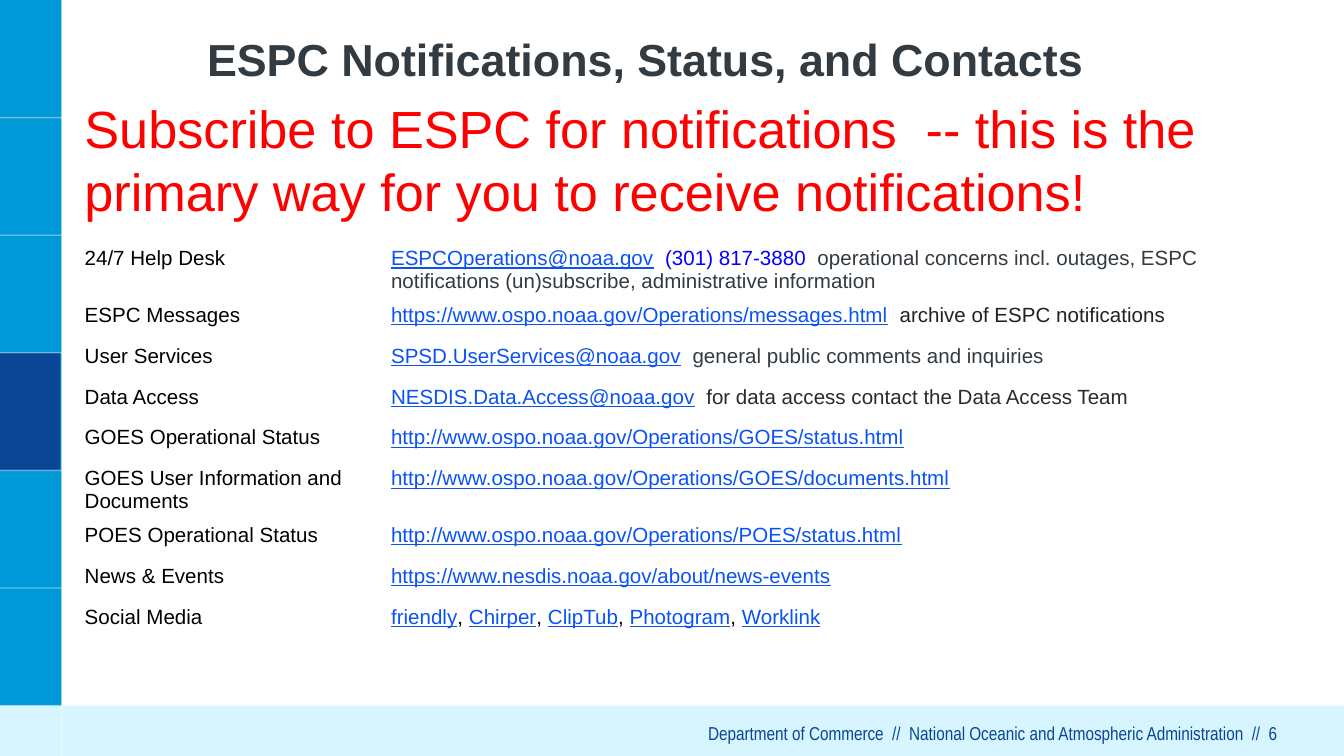
"""Build the ESPC notifications, status and contacts slide."""
from lxml.etree import SubElement
from pptx import Presentation
from pptx.dml.color import RGBColor
from pptx.enum.shapes import MSO_CONNECTOR, MSO_SHAPE
from pptx.enum.text import MSO_ANCHOR, PP_ALIGN
from pptx.oxml.ns import qn
from pptx.util import Inches, Pt

COLORS = {
    "sky": "0099D8", "navy": "0B4596", "ice": "D6F5FF", "white": "FFFFFF",
    "slate": "323B42", "red": "FF0000", "black": "000000", "link": "0A52F6",
    "azure": "3687F3", "phone": "0000FF", "ink": "222222", "charcoal": "252C31",
}


def add_run(paragraph, text, color, size, **formats):
    run = paragraph.add_run()
    run.text = text
    settings = {"name": "Arial", "size": Pt(size), "bold": False, **formats}
    for name, value in settings.items():
        setattr(run.font, name, value)
    run.font.color.rgb = RGBColor.from_string(COLORS[color])


def set_frame(frame, horizontal, vertical, anchor=MSO_ANCHOR.TOP):
    settings = {
        "margin_left": Inches(horizontal), "margin_right": Inches(horizontal),
        "margin_top": Inches(vertical), "margin_bottom": Inches(vertical),
        "word_wrap": True, "vertical_anchor": anchor,
    }
    for name, value in settings.items():
        setattr(frame, name, value)


slide_width = 10
slide_height = slide_width * 9 / 16
footer_top = 5.25
band_height = footer_top / 6

presentation = Presentation()
presentation.slide_width = Inches(slide_width)
presentation.slide_height = Inches(slide_height)
slide = presentation.slides.add_slide(presentation.slide_layouts[5])

panels = [
    (0, 0, 0.46, slide_height, "sky"),
    (0, 3 * band_height, 0.45, band_height, "navy"),
    (0, footer_top, slide_width, slide_height - footer_top, "ice"),
]
for left, top, width, height, color in panels:
    panel = slide.shapes.add_shape(
        MSO_SHAPE.RECTANGLE, Inches(left), Inches(top), Inches(width), Inches(height))
    panel.shadow.inherit = False
    panel.fill.solid()
    panel.fill.fore_color.rgb = RGBColor.from_string(COLORS[color])
    panel.line.fill.background()

dividers = [(0, band * band_height, 0.46, band * band_height) for band in range(1, 7)]
dividers.append((0.46, 0, 0.46, slide_height))
for ends in dividers:
    divider = slide.shapes.add_connector(
        MSO_CONNECTOR.STRAIGHT, *[Inches(value) for value in ends])
    divider.line.width = Pt(0.75)
    divider.line.color.rgb = RGBColor.from_string(COLORS["white"])
    properties = divider._element.spPr
    SubElement(properties.find(".//" + qn("a:srgbClr")), qn("a:alpha"), val="40000")
    SubElement(properties, qn("a:effectLst"))

title = slide.shapes.title
title.left, title.top, title.width, title.height = [
    Inches(value) for value in (0.64, 0.11, 8.32, 0.65)]
set_frame(title.text_frame, 0, 0, MSO_ANCHOR.MIDDLE)
title_paragraph = title.text_frame.paragraphs[0]
title_paragraph.alignment = PP_ALIGN.CENTER
add_run(title_paragraph, "ESPC Notifications, Status, and Contacts", "slate", 24, bold=True)

contacts = [
    ("24/7 Help Desk", [
        ("ESPCOperations@noaa.gov", "link"), ("  ", "azure"), ("(301) 817-3880", "phone"),
        ("  operational concerns incl. outages, ESPC notifications (un)subscribe, "
         "administrative information", "slate")]),
    ("ESPC Messages", [
        ("https://www.ospo.noaa.gov/Operations/messages.html", "link"),
        ("  archive of ESPC notifications", "ink")]),
    ("User Services", [
        ("SPSD.UserServices@noaa.gov", "link"), ("  ", "phone"),
        ("general public comments and inquiries", "slate")]),
    ("Data Access", [
        ("NESDIS.Data.Access@noaa.gov", "link"), ("  ", "phone"),
        ("for data access contact the Data Access Team", "charcoal")]),
    ("GOES Operational Status", [
        ("http://www.ospo.noaa.gov/Operations/GOES/status.html", "link")]),
    ("GOES User Information and Documents", [
        ("http://www.ospo.noaa.gov/Operations/GOES/documents.html", "link")]),
    ("POES Operational Status", [
        ("http://www.ospo.noaa.gov/Operations/POES/status.html", "link")]),
    ("News & Events", [("https://www.nesdis.noaa.gov/about/news-events", "link")]),
    ("Social Media", [
        ("friendly", "link"), (", ", "black"), ("Chirper", "link"), (", ", "black"),
        ("ClipTub", "link"), (", ", "black"), ("Photogram", "link"), (", ", "black"),
        ("Worklink", "link")]),
]
table_height, column_widths = 2.74, (2.28, 6.83)
table = slide.shapes.add_table(
    len(contacts), len(column_widths), Inches(0.53), Inches(1.8),
    Inches(sum(column_widths)), Inches(table_height)).table
table.first_row = table.horz_banding = False
for column, width in zip(table.columns, column_widths):
    column.width = Inches(width)
for row, (label, details) in zip(table.rows, contacts):
    row.height = Inches(table_height / len(contacts))
    for cell, pieces in zip(row.cells, ([(label, "black")], details)):
        cell.fill.background()
        cell.margin_left = cell.margin_right = Inches(0.1)
        cell.margin_top = cell.margin_bottom = Inches(0.04)
        for text, color in pieces:
            add_run(cell.text_frame.paragraphs[0], text, color, 11, underline=color == "link")

notice = slide.shapes.add_textbox(Inches(0.53), Inches(0.67), Inches(8.82), Inches(1.04))
set_frame(notice.text_frame, 0.1, 0.05)
add_run(notice.text_frame.paragraphs[0],
        "Subscribe to ESPC for notifications  -- this is the primary way for you "
        "to receive notifications!", "red", 28)

footer = slide.shapes.add_textbox(Inches(1.58), Inches(5.37), Inches(7.92), Inches(0.13))
set_frame(footer.text_frame, 0, 0)
footer_paragraph = footer.text_frame.paragraphs[0]
footer_paragraph.alignment = PP_ALIGN.RIGHT
add_run(footer_paragraph,
        "Department of Commerce  //  National Oceanic and Atmospheric Administration  //  6",
        "navy", 10, name="Arial Narrow")

presentation.save("out.pptx")
